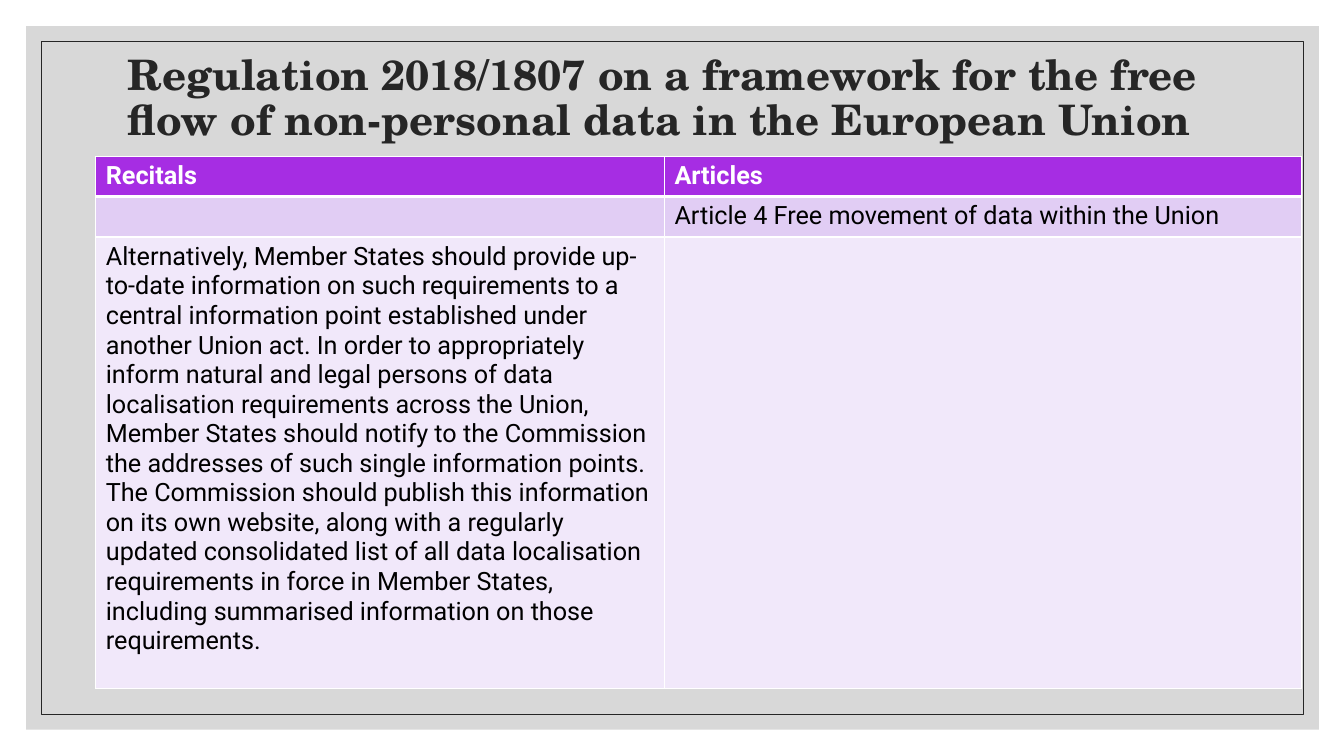
from lxml.etree import SubElement
from pptx import Presentation
from pptx.dml.color import RGBColor as RGB
from pptx.enum.shapes import MSO_SHAPE as Shape
from pptx.enum.text import MSO_ANCHOR as Anchor
from pptx.oxml import parse_xml
from pptx.oxml.ns import nsdecls, qn
from pptx.util import Inches, Pt

COLOURS = {
    "panel": "BFBFBF",
    "ink": "262626",
    "header": "A62DE3",
    "band": "E1CDF4",
    "pale": "F1E8FA",
    "white": "FFFFFF",
    "black": "000000",
}
TITLE = {"name": "TeX Gyre Schola", "size": Pt(30), "bold": True}
HEADER = {"name": "Roboto", "size": Pt(18), "bold": True}
BODY = {"name": "Roboto", "size": Pt(18), "bold": False}

HEADING = (
    "Regulation 2018/1807 on a framework for the free flow of "
    "non-personal data in the European Union"
)
RECITAL = (
    "Alternatively, Member States should provide up-to-date information on such "
    "requirements to a central information point established under another Union act. "
    "In order to appropriately inform natural and legal persons of data localisation "
    "requirements across the Union, Member States should notify to the Commission the "
    "addresses of such single information points. The Commission should publish this "
    "information on its own website, along with a regularly updated consolidated list "
    "of all data localisation requirements in force in Member States, including "
    "summarised information on those requirements."
)
ROWS = [
    ("Recitals", "Articles"),
    ("", "Article 4 Free movement of data within the Union"),
    (RECITAL, ""),
]
ROW_STYLES = [
    ("header", HEADER, "white"),
    ("band", BODY, "black"),
    ("pale", BODY, "black"),
]


class SlideBuilder:
    """Draws styled elements on the current slide."""

    def __init__(self, page, colours):
        self.page = page
        self.colours = colours

    def colour(self, name):
        return RGB.from_string(self.colours[name])

    def frame(self, place, fill=None, opacity=100, line=None):
        box = self.page.shapes.add_shape(Shape.RECTANGLE, *map(Inches, place))
        box.shadow.inherit = False
        if fill:
            box.fill.solid()
            box.fill.fore_color.rgb = self.colour(fill)
            tint = box._element.spPr.find(qn("a:solidFill"))[0]
            SubElement(tint, qn("a:alpha"), val=str(opacity * 1000))
        else:
            box.fill.background()
        if line:
            box.line.color.rgb = self.colour(line)
            box.line.width = Pt(0.5)
        else:
            box.line.fill.background()

    def add_span(self, para, text, style, colour):
        span = para.add_run()
        span.text = text
        for key, value in style.items():
            setattr(span.font, key, value)
        span.font.color.rgb = self.colour(colour)

    def title(self, place, text):
        box = self.page.shapes.add_textbox(*map(Inches, place))
        box.text_frame.word_wrap = True
        box.text_frame.vertical_anchor = Anchor.MIDDLE
        para = box.text_frame.paragraphs[0]
        para.line_spacing = 0.9
        self.add_span(para, text, TITLE, "ink")

    def borders(self, cell, widths):
        for side, width in widths.items():
            edge = parse_xml(
                f'<a:ln{side} {nsdecls("a")} w="{Pt(width)}"><a:solidFill>'
                f'<a:srgbClr val="{self.colours["white"]}"/></a:solidFill></a:ln{side}>'
            )
            cell._tc.get_or_add_tcPr().append(edge)

    def table(self, place, widths, heights, rows, styles):
        grid = self.page.shapes.add_table(
            len(rows), len(widths), *map(Inches, place)
        ).table
        for column, width in zip(grid.columns, widths):
            column.width = Inches(width)
        for index, (texts, style) in enumerate(zip(rows, styles)):
            fill, font, ink = style
            grid.rows[index].height = Inches(heights[index])
            for column, text in enumerate(texts):
                cell = grid.cell(index, column)
                top, bottom = 3 if index == 1 else 1, 3 if index == 0 else 1
                self.borders(cell, {"L": 1, "R": 1, "T": top, "B": bottom})
                cell.fill.solid()
                cell.fill.fore_color.rgb = self.colour(fill)
                if text:
                    self.add_span(cell.text_frame.paragraphs[0], text, font, ink)


def main():
    deck = Presentation()
    deck.slide_width, deck.slide_height = Inches(13.33), Inches(7.5)
    page = deck.slides.add_slide(deck.slide_layouts[6])
    builder = SlideBuilder(page, COLOURS)
    builder.frame((0.26, 0.26, 12.82, 6.98), fill="panel", opacity=60)
    builder.frame((0.41, 0.41, 12.52, 6.68), line="ink")
    builder.title((1.17, 0.56, 11, 0.85), HEADING)
    builder.table(
        (0.95, 1.55, 11.96, 5.28), (5.64, 6.32), (0.4, 0.4, 4.48), ROWS, ROW_STYLES
    )
    deck.save("out.pptx")


if __name__ == "__main__":
    main()
